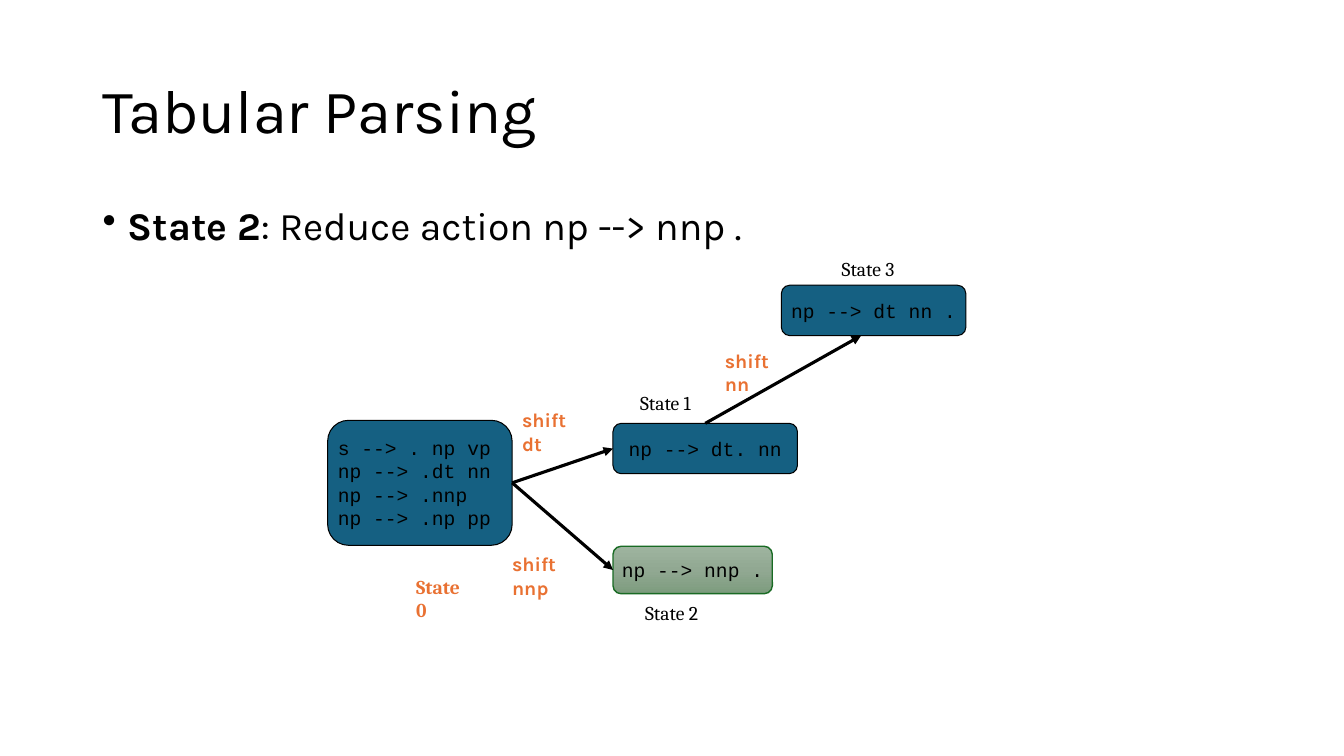
from copy import deepcopy

from lxml.etree import SubElement
from pptx import Presentation
from pptx.dml.color import RGBColor
from pptx.enum.shapes import MSO_CONNECTOR, MSO_SHAPE
from pptx.enum.text import MSO_ANCHOR, PP_ALIGN
from pptx.oxml.ns import qn
from pptx.util import Emu, Pt

PX = 9144  # 100 px to the inch
BLACK = RGBColor(0x00, 0x00, 0x00)
BLUE = RGBColor(0x15, 0x60, 0x82)
ORANGE = RGBColor(0xE9, 0x71, 0x32)
GREEN = RGBColor(0x19, 0x6B, 0x24)
GREEN_STOPS = [
    (0, RGBColor(0x9E, 0xB4, 0x9F)),
    (0.5, RGBColor(0x91, 0xA8, 0x92)),
    (1, RGBColor(0x7D, 0x9C, 0x7E)),
]
TOP, LEFT, BOTTOM, RIGHT = range(4)  # connection sites


def px(*lengths):
    return [Emu(length * PX) for length in lengths]


def set_font(paragraph, name, size, color=BLACK, bold=False):
    font = paragraph.font
    font.name, font.size, font.bold = name, Pt(size), bold
    font.color.rgb = color


def add_text(slide, place, text, name, size, color=BLACK, bold=False, wrap=True):
    box = slide.shapes.add_textbox(*px(*place))
    box.text_frame.word_wrap = wrap
    paragraph = box.text_frame.paragraphs[0]
    paragraph.text = text
    set_font(paragraph, name, size, color, bold)
    return box.text_frame


def add_title(slide, text):
    frame = add_text(slide, (92, 40, 1150, 145), text, "Karla", 44)
    frame.vertical_anchor = MSO_ANCHOR.MIDDLE
    frame.paragraphs[0].line_spacing = 0.9


def add_bullet(slide, lead, rest):
    frame = add_text(slide, (92, 200, 1150, 476), "", "Karla", 28)
    paragraph = frame.paragraphs[0]
    paragraph.line_spacing = 0.9
    paragraph.space_before = Pt(10)
    lead_run = paragraph.add_run()
    lead_run.text = lead
    lead_run.font.bold = True
    paragraph.add_run().text = rest
    properties = paragraph._p.get_or_add_pPr()
    properties.set("marL", str(25 * PX))
    properties.set("indent", str(-25 * PX))
    bullet = properties.makeelement(qn("a:buChar"), {"char": "•"})
    properties.find(qn("a:defRPr")).addprevious(bullet)


def fill_gradient(shape, stops):
    shape.fill.gradient()
    shape.fill.gradient_angle = 270
    stop_list = shape._element.spPr.find(qn("a:gradFill")).find(qn("a:gsLst"))
    stop_list.insert(1, deepcopy(stop_list[0]))
    for stop, (position, color) in zip(shape.fill.gradient_stops, stops):
        stop.position = position
        stop.color.rgb = color


def add_state(slide, place, items, final=False):
    state = slide.shapes.add_shape(MSO_SHAPE.ROUNDED_RECTANGLE, *px(*place))
    state.shadow.inherit = False
    if final:
        fill_gradient(state, GREEN_STOPS)
    else:
        state.fill.solid()
        state.fill.fore_color.rgb = BLUE
    state.line.color.rgb = GREEN if final else BLACK
    state.line.width = Pt(1 if final else 0.75)

    # Several items line up on the left, a single one is centred
    several = len(items) > 1
    frame = state.text_frame
    frame.word_wrap = several
    frame.vertical_anchor = MSO_ANCHOR.MIDDLE
    if several:
        frame.margin_left, frame.margin_right = px(4, 4)
    frame.text = "\n".join(items)
    for paragraph in frame.paragraphs:
        paragraph.alignment = PP_ALIGN.LEFT if several else PP_ALIGN.CENTER
        set_font(paragraph, "Courier New", 14)
    return state


def add_shift(slide, start, site, end, target=None):
    arrow = slide.shapes.add_connector(MSO_CONNECTOR.STRAIGHT, 0, 0, *px(*end))
    arrow.begin_connect(start, site)
    if target is not None:
        arrow.end_connect(target, LEFT)
    arrow.line.color.rgb = BLACK
    arrow.line.width = Pt(2.25)
    SubElement(arrow.line._get_or_add_ln(), qn("a:tailEnd"), type="triangle")
    SubElement(arrow._element.spPr, qn("a:effectLst"))


def main():
    presentation = Presentation()
    presentation.slide_width, presentation.slide_height = px(1333, 750)
    slide = presentation.slides.add_slide(presentation.slide_layouts[6])

    # Heading
    add_title(slide, "Tabular Parsing")
    add_bullet(slide, "State 2", ": Reduce action np --> nnp .")

    # States with their dotted rules
    state_0 = add_state(slide, (325, 417, 183, 124), [
        "s --> . np vp", "np --> .dt nn", "np --> .nnp", "np --> .np pp"])
    state_1 = add_state(slide, (608, 420, 183, 50), ["np --> dt. nn"])
    state_2 = add_state(slide, (608, 542, 158, 47), ["np --> nnp ."], final=True)
    add_state(slide, (775, 283, 183, 50), ["np --> dt nn ."])

    # Shift transitions
    add_shift(slide, state_0, RIGHT, (608, 445), state_1)
    add_shift(slide, state_0, RIGHT, (608, 565), state_2)
    add_shift(slide, state_1, TOP, (854, 333))

    # State names
    for name, left, top in [("State 1", 625, 383), ("State 2", 630, 591),
                            ("State 3", 825, 250)]:
        add_text(slide, (left, top, 74, 33), name, "Cambria", 14, wrap=False)
    add_text(slide, (403, 565, 77, 34), "State 0", "Cambria", 14, ORANGE, True)

    # Transition labels
    for label, left, top, width in [("shift dt", 508, 400, 78),
                                    ("shift nnp", 498, 543, 92),
                                    ("shift nn", 709, 341, 82)]:
        add_text(slide, (left, top, width, 34), label, "Karla", 14, ORANGE, True)

    presentation.save("out.pptx")


if __name__ == "__main__":
    main()
